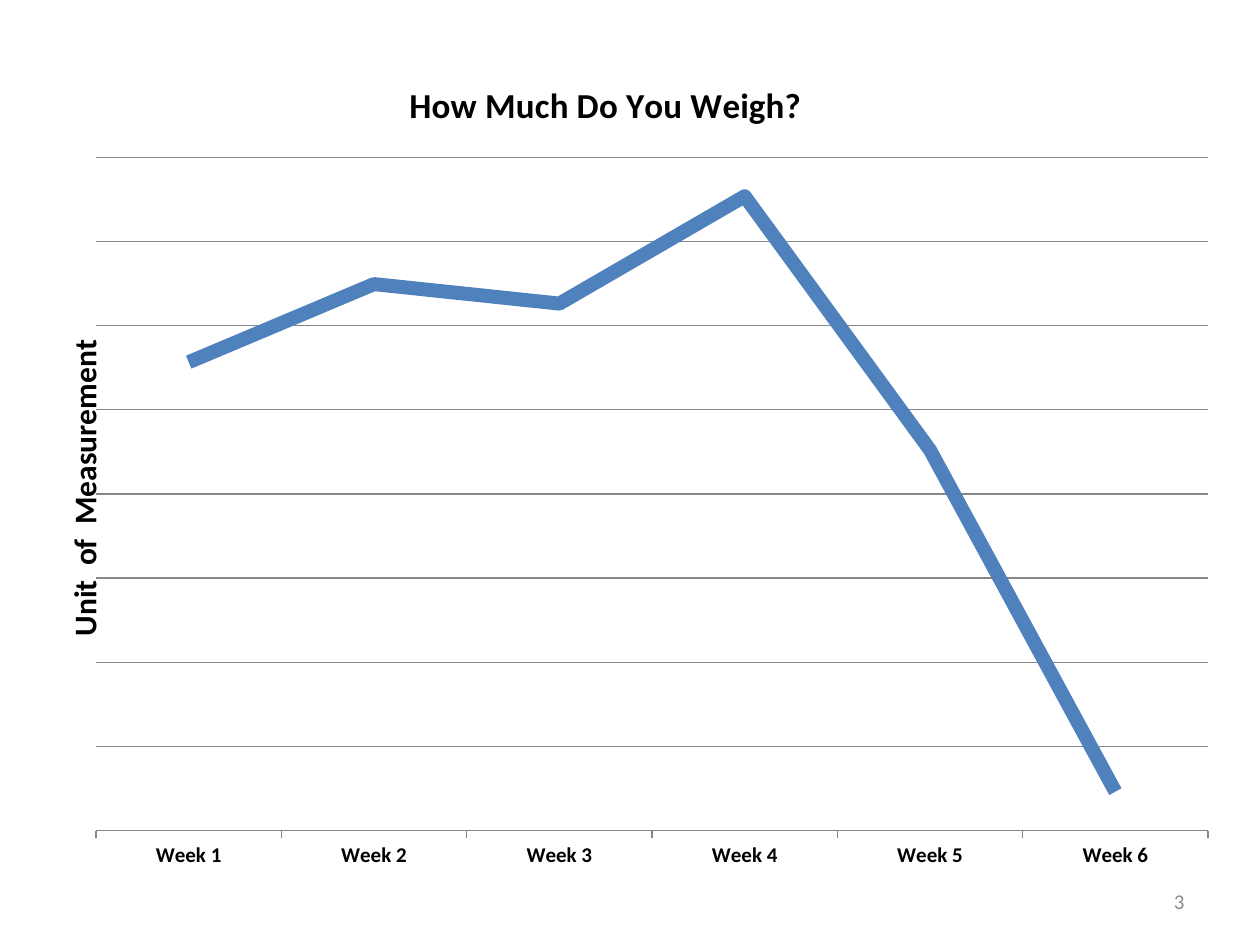
import pptx
import pptx.chart.data
import pptx.dml.color
import pptx.enum.chart
import pptx.enum.text
import pptx.oxml
import pptx.oxml.ns
import pptx.util
from dataclasses import dataclass

Cm, Pt = pptx.util.Cm, pptx.util.Pt
RGB = pptx.dml.color.RGBColor


@dataclass(frozen=True)
class Theme:
    font: str = "Calibri"
    text: RGB = RGB(0x00, 0x00, 0x00)
    muted: RGB = RGB(0x8C, 0x8C, 0x8C)
    grid: RGB = RGB(0x86, 0x86, 0x86)
    weight: RGB = RGB(0x4F, 0x81, 0xBD)
    title_size: int = 20
    axis_title_size: int = 18
    label_size: int = 12
    weight_line: float = 8
    grid_line: float = 0.75


THEME = Theme()
WEEKS = [f"Week {number}" for number in range(1, 7)]
WEIGHTS = [83, 91, 89, 100, 74, 39]
LOWEST, HIGHEST, GRID_STEPS = 35, 104, 8


def style_font(font, size, color, bold=False):
    font.name = THEME.font
    font.size = Pt(size)
    font.bold = bold
    font.color.rgb = color


def set_title(title, text, size, x, y):
    """Write a chart or axis title with its corner at fractions x, y of the chart."""
    paragraph = title.text_frame.paragraphs[0]
    paragraph.text = text
    style_font(paragraph.runs[0].font, size, THEME.text, True)
    element = title._element
    for old in element.findall(pptx.oxml.ns.qn("c:layout")):
        element.remove(old)
    element.find(pptx.oxml.ns.qn("c:tx")).addnext(manual_layout(x=x, y=y))


def manual_layout(inner=False, **fractions):
    target = '<c:layoutTarget val="inner"/>' if inner else ""
    modes = '<c:xMode val="edge"/><c:yMode val="edge"/>'
    values = "".join(f'<c:{key} val="{value}"/>' for key, value in fractions.items())
    return pptx.oxml.parse_xml(
        f'<c:layout {pptx.oxml.ns.nsdecls("c")}><c:manualLayout>'
        f"{target}{modes}{values}</c:manualLayout></c:layout>"
    )


def style_line(line, color, width):
    line.color.rgb = color
    line.width = Pt(width)


def add_page_number(slide, left, top, width, height):
    box = slide.shapes.add_textbox(left, top, width, height)
    frame = box.text_frame
    frame.word_wrap = True
    frame.vertical_anchor = pptx.enum.text.MSO_ANCHOR.MIDDLE
    frame.text = "3"
    number = frame.paragraphs[0]
    number.alignment = pptx.enum.text.PP_ALIGN.RIGHT
    style_font(number.runs[0].font, THEME.label_size, THEME.muted)


def add_weight_chart(slide, left, top, width, height):
    data = pptx.chart.data.CategoryChartData(number_format="0")
    data.categories = WEEKS
    data.add_series("Series 1", WEIGHTS)
    chart = slide.shapes.add_chart(
        pptx.enum.chart.XL_CHART_TYPE.LINE, left, top, width, height, data
    ).chart
    chart.has_legend = False
    style_font(chart.font, THEME.label_size, THEME.text, True)

    # Title and plot area
    chart.has_title = True
    set_title(chart.chart_title, "How Much Do You Weigh?", THEME.title_size, 0.31, 0.04)
    plot_area = chart._chartSpace.chart.plotArea
    for old in plot_area.findall(pptx.oxml.ns.qn("c:layout")):
        plot_area.remove(old)
    plot_area.insert(0, manual_layout(True, x=0.053, y=0.136, w=0.931, h=0.776))

    # Weight line
    plot = chart.plots[0]
    plot.vary_by_categories = False
    weights = plot.series[0]
    weights.smooth = False
    weights.marker.style = pptx.enum.chart.XL_MARKER_STYLE.NONE
    style_line(weights.format.line, THEME.weight, THEME.weight_line)

    # Week axis
    weeks = chart.category_axis
    weeks.major_tick_mark = pptx.enum.chart.XL_TICK_MARK.OUTSIDE
    style_line(weeks.format.line, THEME.grid, THEME.grid_line)

    # Hidden value axis with its gridlines and title
    scale = chart.value_axis
    scale.minimum_scale, scale.maximum_scale = LOWEST, HIGHEST
    scale.major_unit = (HIGHEST - LOWEST) / GRID_STEPS
    scale.has_major_gridlines = True
    style_line(scale.major_gridlines.format.line, THEME.grid, THEME.grid_line)
    scale.has_title = True
    set_title(scale.axis_title, "Unit  of  Measurement", THEME.axis_title_size, 0.02, 0.34)
    body = scale.axis_title.text_frame._txBody.bodyPr
    body.set("rot", "-5400000")
    body.set("vert", "horz")
    scale.visible = False


def main():
    deck = pptx.Presentation()
    deck.slide_width, deck.slide_height = Cm(25.4), Cm(19.05)
    slide = deck.slides.add_slide(deck.slide_layouts[6])
    add_page_number(slide, Cm(18.2), Cm(17.66), Cm(5.93), Cm(1.01))
    add_weight_chart(slide, Cm(0.66), Cm(0.79), Cm(24.08), Cm(17.5))
    deck.save("out.pptx")


if __name__ == "__main__":
    main()
